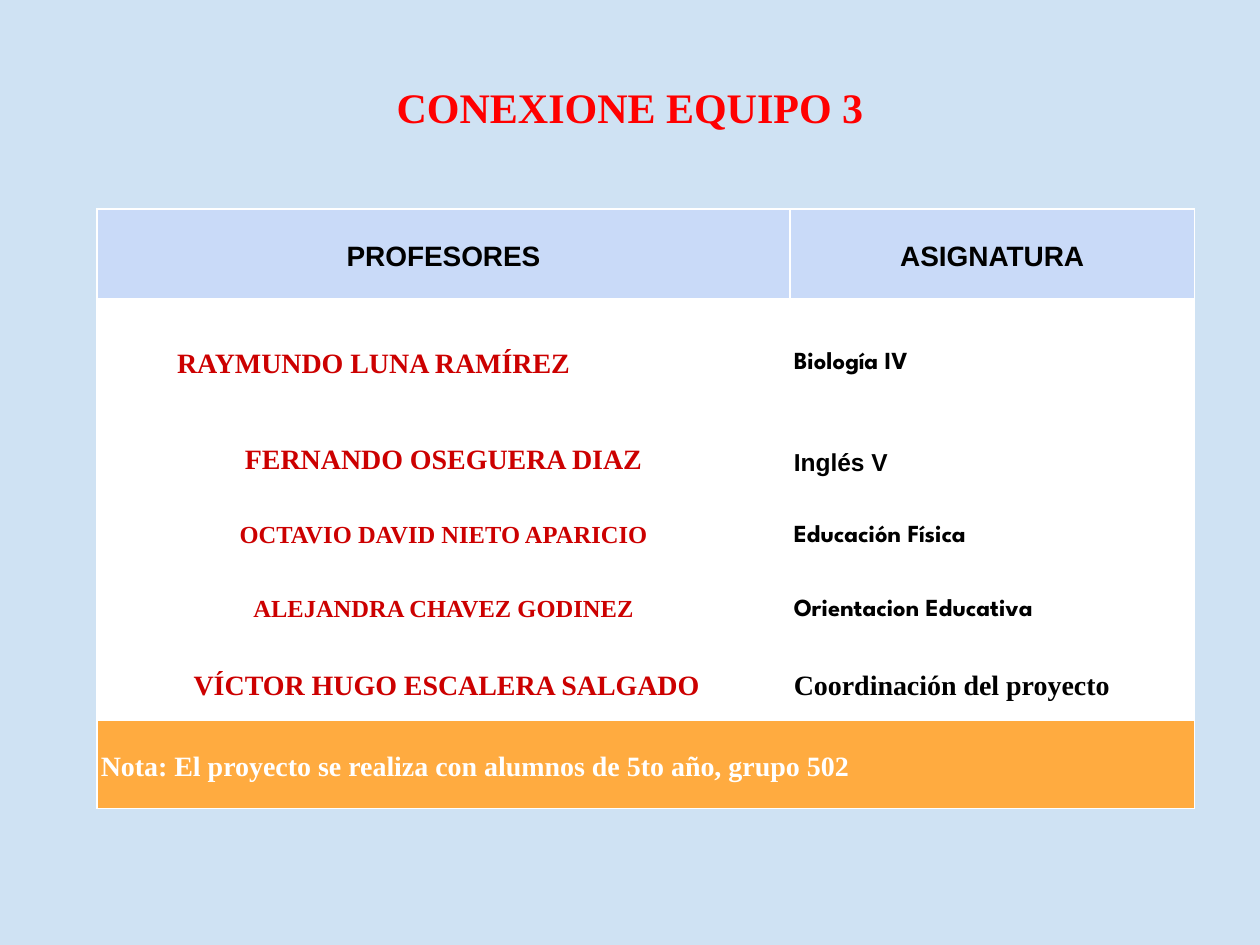
from lxml import etree
from pptx import Presentation
from pptx.dml.color import RGBColor
from pptx.enum.text import MSO_ANCHOR, PP_ALIGN
from pptx.oxml.ns import qn
from pptx.util import Inches, Pt

CENTER, LEFT = PP_ALIGN.CENTER, PP_ALIGN.LEFT
MIDDLE = MSO_ANCHOR.MIDDLE
TITLE_ONLY = 5

WIDTH, HEIGHT = 10, 7.5
SERIF, SANS, DISPLAY = "Times New Roman", "Arial", "League Spartan"
BLACK, WHITE, RED, DARK_RED = "000000", "FFFFFF", "FF0000", "CC0000"
SKY, HEADER_BLUE, ORANGE = "CFE2F3", "C9DAF8", "FFAB40"

COLUMN_WIDTHS = [5.5, 3.21]
ROW_HEIGHTS = [0.72, 0.98] + [0.59] * 4 + [0.7]
PADDING = 0.03

# Teacher, size, line spacing, extra left and right inset; subject, size, font
TEACHERS = [
    ("RAYMUNDO LUNA RAMÍREZ", 16, 1.15, 0, 1.11, "Biología IV", 14, DISPLAY),
    ("FERNANDO OSEGUERA DIAZ", 16, 1, 0, 0, "Inglés V", 14, SANS),
    ("OCTAVIO DAVID NIETO APARICIO", 14, 1, 0, 0, "Educación Física", 14, DISPLAY),
    ("ALEJANDRA CHAVEZ GODINEZ", 14, 1, 0, 0, "Orientacion Educativa", 14, DISPLAY),
    ("VÍCTOR HUGO ESCALERA SALGADO", 16, 1.15, 0.05, 0,
     "Coordinación del proyecto", 16, SERIF),
]
NOTE = "Nota: El proyecto se realiza con alumnos de 5to año, grupo 502"


def color(value):
    return RGBColor.from_string(value)


def write(text_frame, text, size, font, text_color, align, spacing=1.15):
    paragraph = text_frame.paragraphs[0]
    paragraph.alignment = align
    paragraph.line_spacing = spacing
    run = paragraph.add_run()
    run.text = text
    run.font.size = Pt(size)
    run.font.name = font
    run.font.bold = True
    run.font.color.rgb = color(text_color)


def set_borders(cell, top=1, bottom=1):
    """Draw white borders; the line elements come before the cell's fill."""
    properties = cell._tc.get_or_add_tcPr()
    sides = [("lnL", 1), ("lnR", 1), ("lnT", top), ("lnB", bottom)]
    for index, (side, points) in enumerate(sides):
        line = etree.Element(qn(f"a:{side}"), w=str(Pt(points)))
        fill = etree.SubElement(line, qn("a:solidFill"))
        etree.SubElement(fill, qn("a:srgbClr"), val=WHITE)
        properties.insert(index, line)


def format_cell(cell, fill, left=0, right=0):
    cell.fill.solid()
    cell.fill.fore_color.rgb = color(fill)
    cell.vertical_anchor = MIDDLE
    cell.margin_left = Inches(PADDING + left)
    cell.margin_right = Inches(PADDING + right)
    cell.margin_top = cell.margin_bottom = 0


def add_title(slide, left, top, width, height):
    title = slide.shapes.title
    title.left, title.top = Inches(left), Inches(top)
    title.width, title.height = Inches(width), Inches(height)
    title.text_frame.vertical_anchor = MIDDLE
    write(title.text_frame, "CONEXIONE EQUIPO 3", 24, SERIF, RED, CENTER, 1)


def add_teacher_table(slide, left, top, width, height):
    table = slide.shapes.add_table(
        len(ROW_HEIGHTS), len(COLUMN_WIDTHS),
        Inches(left), Inches(top), Inches(width), Inches(height)).table
    table.horz_banding = False
    for column, share in zip(table.columns, COLUMN_WIDTHS):
        column.width = Inches(width * share / sum(COLUMN_WIDTHS))
    for row, share in zip(table.rows, ROW_HEIGHTS):
        row.height = Inches(height * share / sum(ROW_HEIGHTS))

    # Header
    for column, heading in enumerate(["PROFESORES", "ASIGNATURA"]):
        cell = table.cell(0, column)
        format_cell(cell, HEADER_BLUE)
        write(cell.text_frame, heading, 16, SANS, BLACK, CENTER)

    # Teachers and subjects
    for row, teacher in enumerate(TEACHERS, start=1):
        name, size, spacing, inset_left, inset_right, subject, subject_size, font = teacher
        name_cell, subject_cell = table.cell(row, 0), table.cell(row, 1)
        format_cell(name_cell, WHITE, inset_left, inset_right)
        write(name_cell.text_frame, name, size, SERIF, DARK_RED, CENTER, spacing)
        format_cell(subject_cell, WHITE)
        write(subject_cell.text_frame, subject, subject_size, font, BLACK, LEFT)

    # Note across both columns
    last = len(ROW_HEIGHTS) - 1
    note = table.cell(last, 0)
    note.merge(table.cell(last, 1))
    format_cell(note, ORANGE)
    write(note.text_frame, NOTE, 16, SERIF, WHITE, LEFT)

    # Borders, heavier below the header
    for index, row in enumerate(table.rows):
        for cell in row.cells:
            set_borders(cell, top=3 if index == 1 else 1, bottom=3 if index == 0 else 1)


def main():
    presentation = Presentation()
    presentation.slide_width, presentation.slide_height = Inches(WIDTH), Inches(HEIGHT)
    slide = presentation.slides.add_slide(presentation.slide_layouts[TITLE_ONLY])
    slide.background.fill.solid()
    slide.background.fill.fore_color.rgb = color(SKY)
    add_teacher_table(slide, 0.077 * WIDTH, 1.66, sum(COLUMN_WIDTHS), sum(ROW_HEIGHTS))
    add_title(slide, 0.29 * WIDTH, 0.08 * HEIGHT, 0.42 * WIDTH, 0.5)
    presentation.save("out.pptx")


if __name__ == "__main__":
    main()
